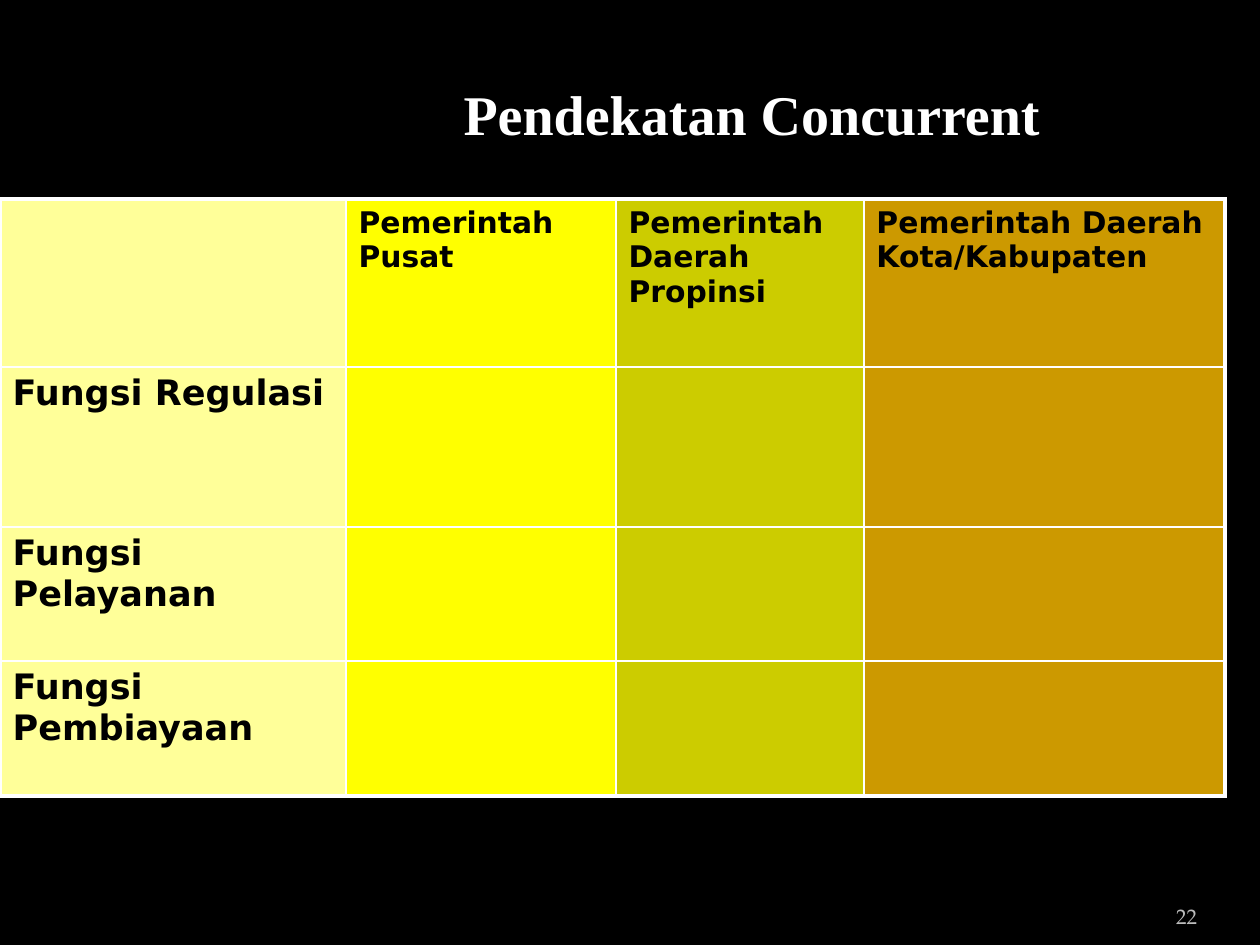
from pptx import Presentation
from pptx.dml.color import RGBColor
from pptx.enum.text import MSO_ANCHOR, MSO_AUTO_SIZE, PP_ALIGN
from pptx.oxml import parse_xml
from pptx.oxml.ns import nsdecls
from pptx.util import Pt

PX = 914400 // 126
TOP, BOTTOM = MSO_ANCHOR.TOP, MSO_ANCHOR.BOTTOM
LEFT, RIGHT = PP_ALIGN.LEFT, PP_ALIGN.RIGHT
FIXED = MSO_AUTO_SIZE.NONE

COLS = [346, 270, 248, 361]
ROWS = [168, 160, 134, 135]
FILLS = ["FFFF99", "FFFF00", "CCCC00", "CC9900"]
HEADS = ["", "Pemerintah Pusat", "Pemerintah Daerah Propinsi",
         "Pemerintah Daerah Kota/Kabupaten"]
ROLES = ["", "Fungsi Regulasi", "Fungsi Pelayanan", "Fungsi Pembiayaan"]


def write(frame, text, size, font, color, bold=False, align=LEFT):
    """Put one formatted run in the first paragraph of a frame."""
    para = frame.paragraphs[0]
    para.alignment = align
    run = para.add_run()
    run.text = text
    run.font.size = Pt(size)
    run.font.name = font
    run.font.bold = bold
    run.font.color.rgb = RGBColor.from_string(color)


def edge(cell, side, width):
    """Add a white border; call in the order L, R, T, B before the fill."""
    cell._tc.get_or_add_tcPr().append(parse_xml(
        f'<a:ln{side} {nsdecls("a")} w="{Pt(width)}"><a:solidFill>'
        f'<a:srgbClr val="FFFFFF"/></a:solidFill></a:ln{side}>'))


deck = Presentation()
deck.slide_width, deck.slide_height = 1260 * PX, 945 * PX
slide = deck.slides.add_slide(deck.slide_layouts[5])
back = slide.background.fill
back.solid()
back.fore_color.rgb = RGBColor.from_string("000000")

# Title
title = slide.shapes.title
title.left, title.top = 451 * PX, 73 * PX
title.width, title.height = 683 * PX, 79 * PX
frame = title.text_frame
frame.auto_size = FIXED
frame.word_wrap = True
frame.vertical_anchor = TOP
write(frame, "Pendekatan Concurrent", 32, "Times New Roman", "FFFFFF", True)

# Table of functions by level of government
table = slide.shapes.add_table(len(ROWS), len(COLS), 0, 199 * PX,
                               sum(COLS) * PX, sum(ROWS) * PX).table
table.first_row = table.horz_banding = False
for col, width in zip(table.columns, COLS):
    col.width = width * PX
for row, height in zip(table.rows, ROWS):
    row.height = height * PX

for r, role in enumerate(ROLES):
    for c, head in enumerate(HEADS):
        cell = table.cell(r, c)
        outer = {"L": c == 0, "R": c == len(COLS) - 1,
                 "T": r == 0, "B": r == len(ROWS) - 1}
        for side, thick in outer.items():
            edge(cell, side, 2.25 if thick else 1)
        cell.fill.solid()
        cell.fill.fore_color.rgb = RGBColor.from_string(FILLS[c])
        text = head if r == 0 else role if c == 0 else ""
        if text:
            size = 17 if r == 0 else 20
            write(cell.text_frame, text, size, "DejaVu Sans", "000000", True)

# Page number
box = slide.shapes.add_textbox(1092 * PX, 885 * PX, 105 * PX, 50 * PX)
frame = box.text_frame
frame.word_wrap = True
frame.margin_left = frame.margin_right = 0
frame.vertical_anchor = BOTTOM
write(frame, "22", 12, "TeX Gyre Pagella", "BCBCBC", align=RIGHT)

deck.save("out.pptx")
